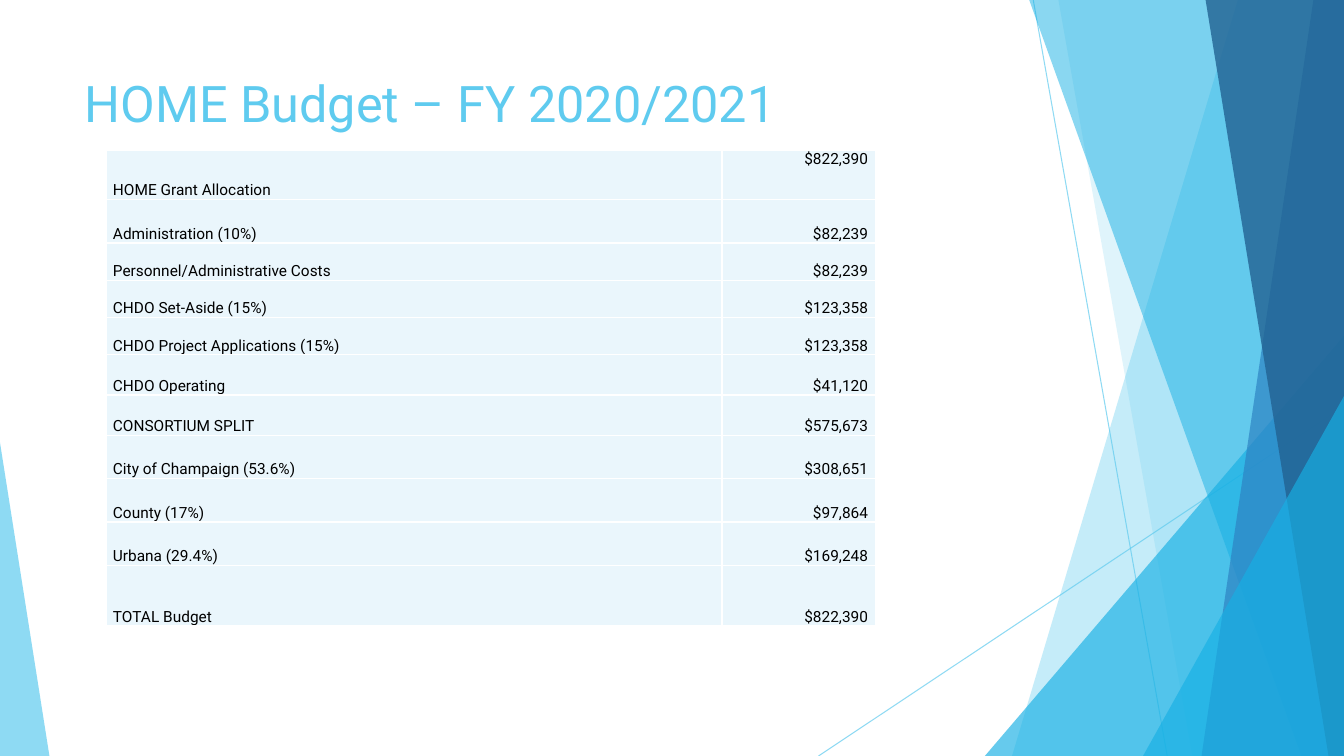
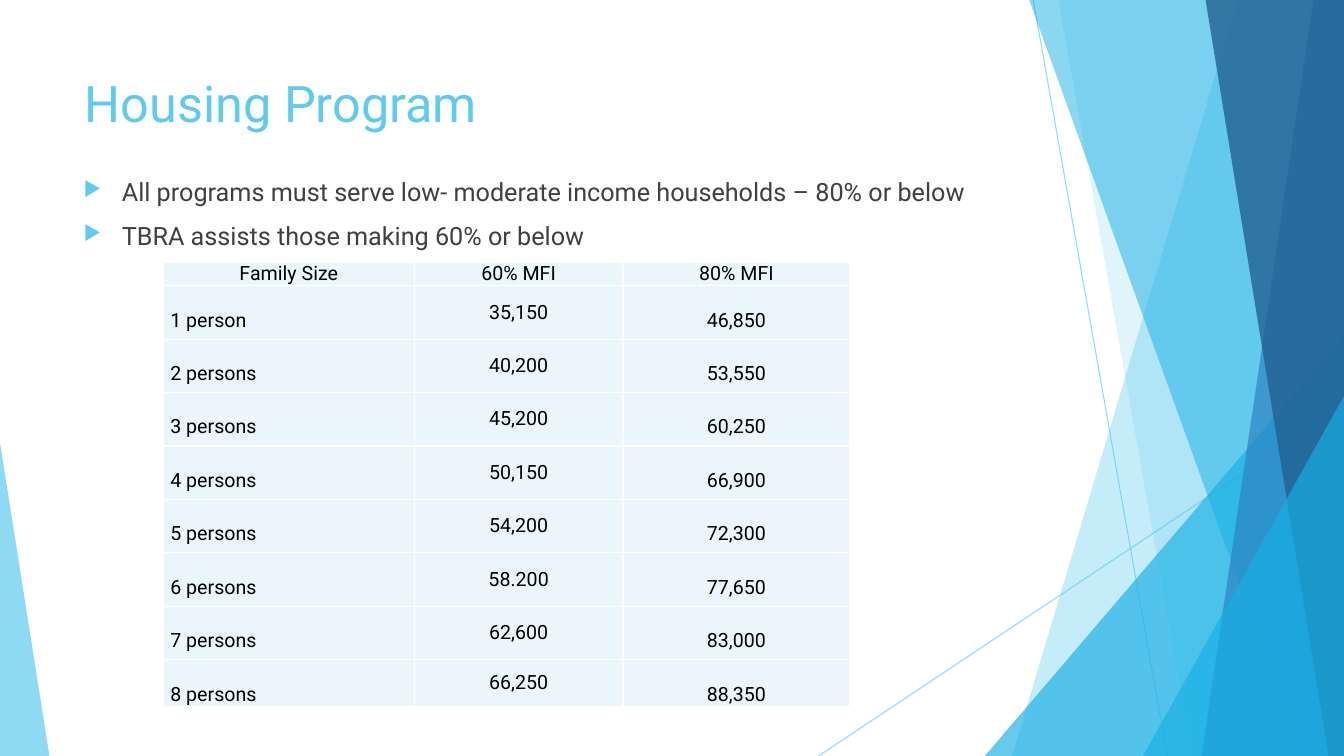
from lxml import etree
from pptx import Presentation
from pptx import util as u
from pptx.dml.color import RGBColor
from pptx.enum import shapes, text
from pptx.oxml.ns import qn

COLOURS = {
    "sky": "5FCBEF", "cyan": "17B0E4", "blue": "2E83C3", "navy": "226292",
    "cell": "EAF6FC", "border": "FFFFFF", "body": "404040", "table": "000000",
}
FONT = "Roboto"
LEFT, CENTER, RIGHT = text.PP_ALIGN.LEFT, text.PP_ALIGN.CENTER, text.PP_ALIGN.RIGHT
TOP, MIDDLE, BOTTOM = text.MSO_ANCHOR.TOP, text.MSO_ANCHOR.MIDDLE, text.MSO_ANCHOR.BOTTOM

prs = Presentation()
prs.slide_width, prs.slide_height = u.Inches(13.33), u.Inches(7.5)
PERCENT_X, PERCENT_Y = prs.slide_width / 100, prs.slide_height / 100


def place(*shares):
    """Turn x, y, x, y ... in percent of the slide into lengths."""
    return [u.Emu(round(share * (PERCENT_Y if i % 2 else PERCENT_X)))
            for i, share in enumerate(shares)]


def style(paragraph, size, colour, align=LEFT):
    paragraph.alignment = align
    for run in paragraph.runs:
        run.font.name, run.font.size, run.font.bold = FONT, u.Pt(size), False
        run.font.color.rgb = RGBColor.from_string(COLOURS[colour])


# Slides and their titles
layout = prs.slide_layouts[5]
slides = []
for heading in ("HOME Budget – FY 2020/2021", "Housing Program"):
    slide = prs.slides.add_slide(layout)
    title = slide.shapes.title
    title.left, title.top, title.width, title.height = place(5.55, 8.93, 70.5, 19.2)
    title.text_frame.text = heading
    title.text_frame.auto_size = text.MSO_AUTO_SIZE.NONE
    title.text_frame.vertical_anchor = TOP
    style(title.text_frame.paragraphs[0], 36, "sky")
    slides.append(slide)
budget, housing = slides

# Decoration: drawn once, then moved to the layout that both slides use
RAYS = [(76.88, 0, 86.85, 100), (100, 53.73, 60.9, 100)]
# A band has its left edge at the top and at the bottom;
# a triangle has left, top, right and the place of its tip.
FACETS = [
    ("band", (92.1, 75.3), "sky", 36),
    ("band", (78.75, 88.72), "sky", 20),
    ("triangle", (73.28, 44.4, 100, 1), "cyan", 66),
    ("band", (76.58, 96.82), "cyan", 50),
    ("band", (97.72, 89.4), "blue", 70),
    ("band", (89.7, 98.85), "navy", 80),
    ("triangle", (85.05, 52.4, 100, 1), "cyan", 66),
    ("triangle", (0, 58.53, 3.68, 0), "sky", 70),
]
decoration = []
for ends in RAYS:
    ray = budget.shapes.add_connector(shapes.MSO_CONNECTOR.STRAIGHT, *place(*ends))
    ray.line.width = u.Pt(0.75)
    ray.line.color.rgb = RGBColor.from_string(COLOURS["sky"])
    etree.SubElement(ray.element.spPr, qn("a:effectLst"))
    decoration.append((ray, 70))
for kind, geometry, colour, opacity in FACETS:
    if kind == "band":
        top_x, bottom_x = geometry
        outline = budget.shapes.build_freeform(*place(top_x, 0))
        outline.add_line_segments(
            [place(*corner) for corner in ((100, 0), (100, 100), (bottom_x, 100))])
        facet = outline.convert_to_shape()
    else:
        left, top, right, tip = geometry
        facet = budget.shapes.add_shape(
            shapes.MSO_SHAPE.ISOSCELES_TRIANGLE,
            *place(left, top, right - left, 100 - top))
        facet.adjustments[0] = tip
    facet.fill.solid()
    facet.fill.fore_color.rgb = RGBColor.from_string(COLOURS[colour])
    facet.line.fill.background()
    facet.shadow.inherit = False
    decoration.append((facet, opacity))
for i, (part, opacity) in enumerate(decoration):
    for colour_node in part.element.iter(qn("a:srgbClr")):
        etree.SubElement(colour_node, qn("a:alpha")).set("val", str(opacity * 1000))
    for identity in part.element.iter(qn("p:cNvPr")):
        identity.set("id", str(100 + i))
    layout.shapes.element.insert(2 + i, part.element)

# Bullets on the housing slide
rules = housing.shapes.add_textbox(*place(5.48, 22.67, 70.5, 14.8)).text_frame
rules.word_wrap = True
rules.text = ("All programs must serve low- moderate income households – 80% or below\n"
              "TBRA assists those making 60% or below")
for rule in rules.paragraphs:
    style(rule, 18, "body")
    rule.space_before = u.Pt(10)
    properties = rule._p.get_or_add_pPr()
    properties.set("marL", str(u.Inches(0.38)))
    properties.set("indent", str(-u.Inches(0.38)))
    bullet_colour = etree.SubElement(properties, qn("a:buClr"))
    etree.SubElement(bullet_colour, qn("a:srgbClr")).set("val", COLOURS["sky"])
    etree.SubElement(properties, qn("a:buSzPct")).set("val", "80000")
    etree.SubElement(properties, qn("a:buChar")).set("char", "▶")

# Tables
BUDGET_ROWS = [
    ("HOME Grant Allocation", "$822,390"),
    ("Administration (10%)", "$82,239"),
    ("Personnel/Administrative Costs", "$82,239"),
    ("CHDO Set-Aside (15%)", "$123,358"),
    ("CHDO Project Applications (15%)", "$123,358"),
    ("CHDO Operating", "$41,120"),
    ("CONSORTIUM SPLIT", "$575,673"),
    ("City of Champaign (53.6%)", "$308,651"),
    ("County (17%)", "$97,864"),
    ("Urbana (29.4%)", "$169,248"),
    ("TOTAL Budget", "$822,390"),
]
INCOME_ROWS = [
    ("Family Size", "60% MFI", "80% MFI"),
    ("1 person", "35,150", "46,850"),
    ("2 persons", "40,200", "53,550"),
    ("3 persons", "45,200", "60,250"),
    ("4 persons", "50,150", "66,900"),
    ("5 persons", "54,200", "72,300"),
    ("6 persons", "58.200", "77,650"),
    ("7 persons", "62,600", "83,000"),
    ("8 persons", "66,250", "88,350"),
]
TABLES = [
    (budget, (7.88, 19.87), BUDGET_ROWS, (6.11, 1.52),
     [0.49, 0.43] + [0.37] * 3 + [0.4] * 2 + [0.43] * 3 + [0.6], 11, (LEFT, RIGHT)),
    (housing, (12.15, 34.67), INCOME_ROWS, (2.49, 2.07, 2.25),
     [0.23] + [0.53] * 7 + [0.46], 14, (LEFT, CENTER, CENTER)),
]
for slide, corner, rows, widths, heights, size, aligns in TABLES:
    table = slide.shapes.add_table(
        len(rows), len(widths), *place(*corner),
        u.Inches(sum(widths)), u.Inches(sum(heights))).table
    table.first_row = table.horz_banding = False
    for column, width in zip(table.columns, widths):
        column.width = u.Inches(width)
    for r, (row, height) in enumerate(zip(rows, heights)):
        table.rows[r].height = u.Inches(height)
        for c, value in enumerate(row):
            cell = table.cell(r, c)
            cell.text_frame.text = value
            cell.margin_left = cell.margin_right = u.Inches(0.07)
            cell.margin_top = cell.margin_bottom = 0
            align = aligns[c]
            if slide is budget:
                cell.vertical_anchor = TOP if (r, c) == (0, 1) else BOTTOM
            elif r == 0:
                align = CENTER
            elif c == 1:
                cell.vertical_anchor = MIDDLE
            else:
                cell.margin_top = u.Inches(0.23)
            style(cell.text_frame.paragraphs[0], size, "table", align)
            for side in ("a:lnL", "a:lnR", "a:lnT", "a:lnB"):
                edge = etree.SubElement(cell._tc.get_or_add_tcPr(), qn(side))
                edge.set("w", str(u.Pt(1)))
                edge_fill = etree.SubElement(edge, qn("a:solidFill"))
                etree.SubElement(edge_fill, qn("a:srgbClr")).set("val", COLOURS["border"])
            cell.fill.solid()
            cell.fill.fore_color.rgb = RGBColor.from_string(COLOURS["cell"])

prs.save("out.pptx")
